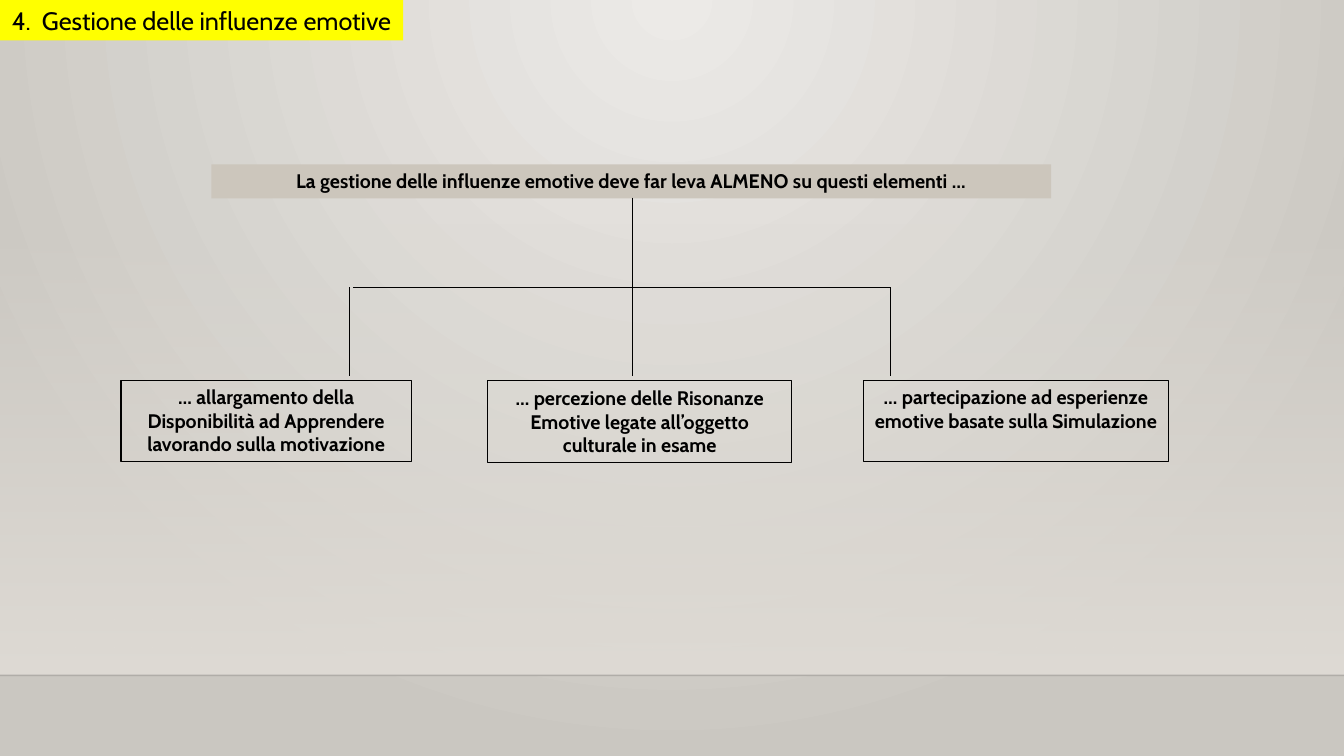
from lxml.etree import SubElement
from pptx import Presentation
from pptx.dml.color import RGBColor
from pptx.enum.shapes import MSO_CONNECTOR, MSO_SHAPE
from pptx.enum.text import MSO_ANCHOR, PP_ALIGN
from pptx.oxml.ns import qn
from pptx.util import Cm, Pt

FONT = "Cabin"
BLACK = RGBColor(0x00, 0x00, 0x00)
YELLOW = RGBColor(0xFF, 0xFF, 0x00)
BEIGE = RGBColor(0xCC, 0xC6, 0xBC)
LIGHT = RGBColor(0xEC, 0xEA, 0xE7)
DARK = RGBColor(0xCA, 0xC7, 0xC1)
FLOOR = RGBColor(0xDF, 0xDB, 0xD5)

WIDE, HIGH = 33.87, 19.05
EDGE = 17.02
MID, LEFT, RIGHT = 15.93, 8.81, 22.43
TOP, BAR, FOOT = 4.98, 7.24, 9.47

ITEMS = [
    (3.05, 9.58, 7.32, "… allargamento della Disponibilità ad Apprendere lavorando sulla motivazione"),
    (12.29, 9.6, 7.67, "… percezione delle Risonanze Emotive legate all’oggetto culturale in esame"),
    (21.77, 9.58, 7.67, "… partecipazione ad esperienze emotive basate sulla Simulazione"),
]
LINKS = [
    (MID, TOP, MID, BAR),
    (RIGHT, BAR, 8.89, BAR),
    *[(x, BAR, x, FOOT) for x in (LEFT, MID, RIGHT)],
]


def set_alpha(parent, share):
    """Set the opacity, in percent, of the first colour under parent."""
    color = next(parent.iter(qn("a:srgbClr")))
    SubElement(color, qn("a:alpha")).set("val", str(share * 1000))


def blend(fill, first, last):
    fill.gradient()
    for stop, color in zip(fill.gradient_stops, (first, last)):
        stop.color.rgb = color


def add_glow(slide):
    """Fill the background with a circular gradient from the top centre."""
    fill = slide.background.fill
    blend(fill, LIGHT, DARK)
    grad = next(slide.element.iter(qn("a:gradFill")))
    grad.remove(grad.find(qn("a:lin")))
    ring = SubElement(grad, qn("a:path"), {"path": "circle"})
    sides = {"l": "43000", "t": "0", "r": "43000", "b": "100000"}
    SubElement(ring, qn("a:fillToRect"), sides)


def add_wall(slide):
    """Add the veil that fades in down to the edge of the floor."""
    top = 5.61
    wall = slide.shapes.add_shape(
        MSO_SHAPE.RECTANGLE, Cm(0), Cm(top), Cm(WIDE), Cm(EDGE - top))
    wall.shadow.inherit = False
    wall.line.fill.background()
    blend(wall.fill, FLOOR, FLOOR)
    wall.fill.gradient_angle = 270
    set_alpha(wall.element.spPr, 0)


def add_line(slide, x1, y1, x2, y2, width=0.75):
    line = slide.shapes.add_connector(
        MSO_CONNECTOR.STRAIGHT, Cm(x1), Cm(y1), Cm(x2), Cm(y2))
    line.line.color.rgb = BLACK
    line.line.width = Pt(width)
    SubElement(line.element.spPr, qn("a:effectLst"))
    return line


def add_box(slide, x, y, width, height, text, size=14, bold=True, fill=None):
    """Add centred text on a fill, or in a thin frame if there is no fill."""
    box = slide.shapes.add_textbox(Cm(x), Cm(y), Cm(width), Cm(height))
    if fill is None:
        box.line.color.rgb = BLACK
        box.line.width = Pt(0.75)
    else:
        box.fill.solid()
        box.fill.fore_color.rgb = fill
    frame = box.text_frame
    frame.word_wrap = True
    frame.vertical_anchor = MSO_ANCHOR.TOP
    para = frame.paragraphs[0]
    para.alignment = PP_ALIGN.CENTER
    run = para.add_run()
    run.text = text
    run.font.name = FONT
    run.font.size = Pt(size)
    run.font.bold = bold
    run.font.color.rgb = BLACK


def main():
    deck = Presentation()
    deck.slide_width, deck.slide_height = Cm(WIDE), Cm(HIGH)
    slide = deck.slides.add_slide(deck.slide_layouts[6])

    add_glow(slide)
    add_wall(slide)
    edge = add_line(slide, 0, EDGE, WIDE, EDGE, 1)
    set_alpha(edge.element.spPr, 20)

    add_box(slide, 0, 0, 10.16, 1.02, "4.  Gestione delle influenze emotive",
            size=18, bold=False, fill=YELLOW)
    add_box(slide, 5.33, 4.14, 21.16, 0.86,
            "La gestione delle influenze emotive deve far leva ALMENO su questi elementi …",
            fill=BEIGE)
    for link in LINKS:
        add_line(slide, *link)
    for x, y, width, text in ITEMS:
        add_box(slide, x, y, width, 2.06, text)

    deck.save("out.pptx")


if __name__ == "__main__":
    main()
